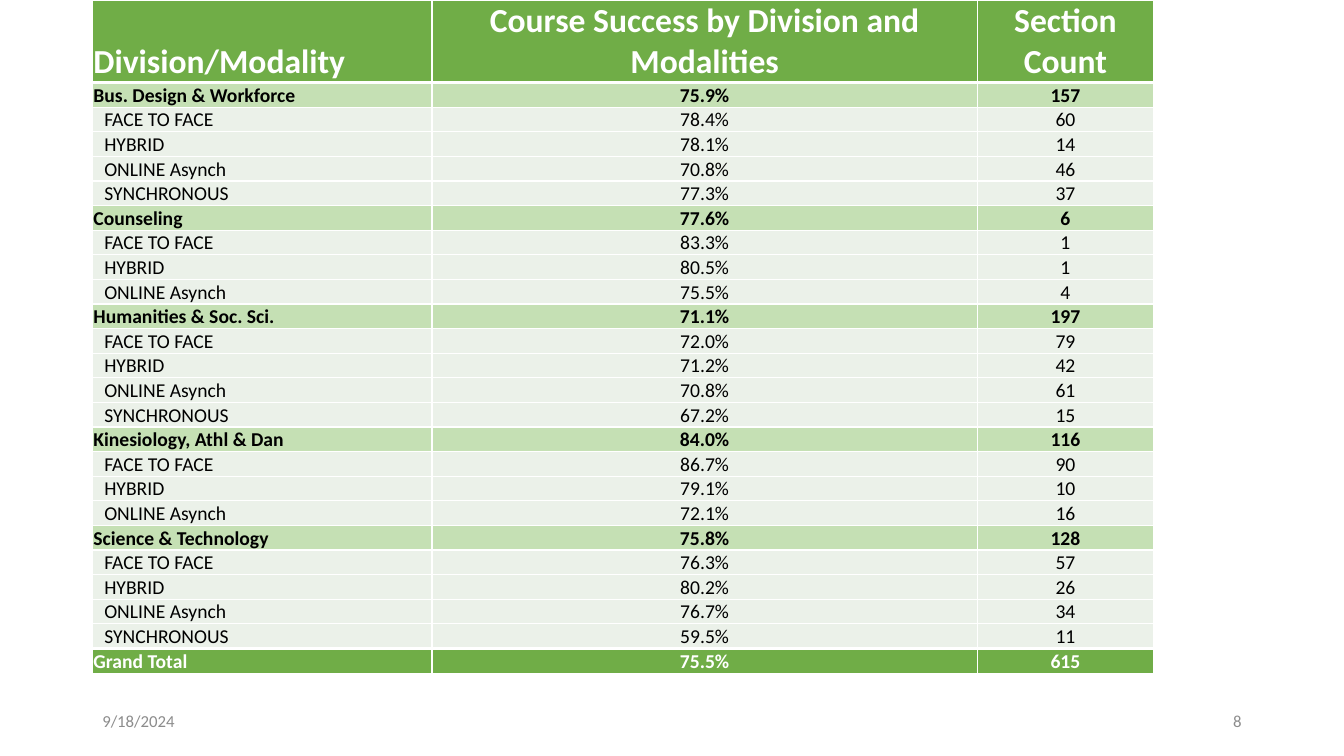
from lxml import etree
from pptx import Presentation
from pptx.dml.color import RGBColor
from pptx.enum import text
from pptx.oxml import ns
from pptx.util import Pt

HEADINGS = ("Division/Modality", "Course Success by Division and Modalities", "Section Count")
FACE, HYBRID, ONLINE, SYNC = "FACE TO FACE", "HYBRID", "ONLINE Asynch", "SYNCHRONOUS"
DIVISIONS = [
    (("Bus. Design & Workforce", "75.9%", "157"),
     [(FACE, "78.4%", "60"), (HYBRID, "78.1%", "14"),
      (ONLINE, "70.8%", "46"), (SYNC, "77.3%", "37")]),
    (("Counseling", "77.6%", "6"),
     [(FACE, "83.3%", "1"), (HYBRID, "80.5%", "1"), (ONLINE, "75.5%", "4")]),
    (("Humanities & Soc. Sci.", "71.1%", "197"),
     [(FACE, "72.0%", "79"), (HYBRID, "71.2%", "42"),
      (ONLINE, "70.8%", "61"), (SYNC, "67.2%", "15")]),
    (("Kinesiology, Athl & Dan", "84.0%", "116"),
     [(FACE, "86.7%", "90"), (HYBRID, "79.1%", "10"), (ONLINE, "72.1%", "16")]),
    (("Science & Technology", "75.8%", "128"),
     [(FACE, "76.3%", "57"), (HYBRID, "80.2%", "26"),
      (ONLINE, "76.7%", "34"), (SYNC, "59.5%", "11")]),
]
GRAND_TOTAL = ("Grand Total", "75.5%", "615")
FOOTERS = [("9/18/2024", 66, text.PP_ALIGN.LEFT), ("8", 678, text.PP_ALIGN.RIGHT)]

STYLES = {
    "heading": dict(fill="70AD47", color="FFFFFF", size=24, bold=True, indent=0.75),
    "division": dict(fill="C5E0B4", color="000000", size=14, bold=True, indent=0.75),
    "modality": dict(fill="EBF1E9", color="000000", size=14, bold=False, indent=8.5),
    "total": dict(fill="70AD47", color="FFFFFF", size=14, bold=True, indent=0.75),
}
COLUMN_WIDTHS = (242.6, 389.5, 126)
HEADING_HEIGHT, ROW_HEIGHT = 59, 17.5
TABLE_LEFT = 66


def rgb(value):
    return RGBColor.from_string(value)


def style_text(para, size, color, bold, align):
    para.alignment = align
    para.font.name = "Calibri"
    para.font.size = Pt(size)
    para.font.bold = bold
    para.font.color.rgb = rgb(color)


def add_border(cell, side, width):
    properties = cell._tc.get_or_add_tcPr()
    line = etree.SubElement(properties, ns.qn(f"a:ln{side}"), w=str(Pt(width)))
    fill = etree.SubElement(line, ns.qn("a:solidFill"))
    etree.SubElement(fill, ns.qn("a:srgbClr"), val="FFFFFF")


def fill_cell(cell, words, column, kind, borders):
    style = STYLES[kind]
    for side, width in borders.items():
        add_border(cell, side, width)
    cell.fill.solid()
    cell.fill.fore_color.rgb = rgb(style["fill"])
    cell.vertical_anchor = text.MSO_ANCHOR.BOTTOM
    cell.margin_left = Pt(0.75 if column else style["indent"])
    cell.margin_right = cell.margin_top = Pt(0.75)
    cell.margin_bottom = 0
    cell.text = words
    align = text.PP_ALIGN.CENTER if column else text.PP_ALIGN.LEFT
    style_text(cell.text_frame.paragraphs[0], style["size"], style["color"], style["bold"], align)


def add_success_table(page):
    rows = [("heading", HEADINGS)]
    for division, modalities in DIVISIONS:
        rows.append(("division", division))
        rows += [("modality", modality) for modality in modalities]
    rows.append(("total", GRAND_TOTAL))

    height = HEADING_HEIGHT + ROW_HEIGHT * (len(rows) - 1)
    table = page.shapes.add_table(len(rows), len(HEADINGS), Pt(TABLE_LEFT), 0,
                                  Pt(sum(COLUMN_WIDTHS)), Pt(height)).table
    for column, width in zip(table.columns, COLUMN_WIDTHS):
        column.width = Pt(width)
    last = len(rows) - 1
    for index, (kind, words) in enumerate(rows):
        table.rows[index].height = Pt(ROW_HEIGHT if index else HEADING_HEIGHT)
        borders = {"L": 1, "R": 1,
                   "T": 3 if index in (1, last) else 1,
                   "B": 3 if index in (0, last - 1) else 1}
        for column, value in enumerate(words):
            fill_cell(table.cell(index, column), value, column, kind, borders)


def add_footer(page, words, left, align):
    box = page.shapes.add_textbox(Pt(left), Pt(500.5), Pt(216), Pt(28.75))
    frame = box.text_frame
    frame.word_wrap = True
    frame.vertical_anchor = text.MSO_ANCHOR.MIDDLE
    frame.text = words
    style_text(frame.paragraphs[0], 12, "8C8C8C", False, align)


def main():
    deck = Presentation()
    deck.slide_width, deck.slide_height = Pt(960), Pt(540)
    page = deck.slides.add_slide(deck.slide_layouts[6])
    for footer in FOOTERS:
        add_footer(page, *footer)
    add_success_table(page)
    deck.save("out.pptx")


if __name__ == "__main__":
    main()
